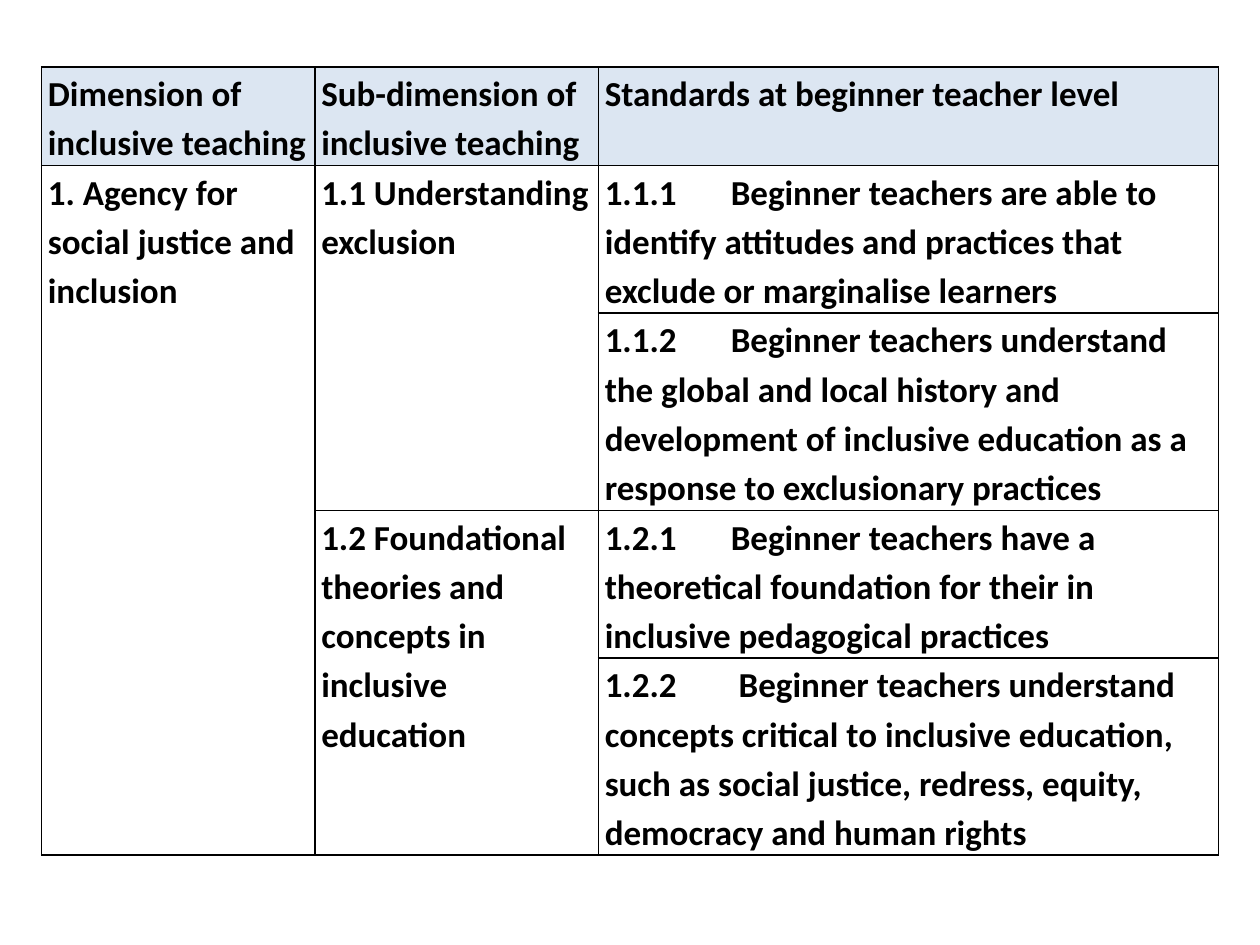
from lxml import etree
from pptx import Presentation
from pptx import util as u
from pptx.dml.color import RGBColor
from pptx.oxml import ns

COLORS = {"ink": "000000", "header": "DCE6F2"}
HEADERS = [
    "Dimension of inclusive teaching",
    "Sub-dimension of inclusive teaching",
    "Standards at beginner teacher level",
]
DIMENSION = "1. Agency for social justice and inclusion"
SUB_DIMENSIONS = [
    ("1.1 Understanding exclusion", [
        ("1.1.1\tBeginner teachers are able to identify attitudes and practices "
         "that exclude or marginalise learners", 3),
        ("1.1.2\tBeginner teachers understand the global and local history and "
         "development of inclusive education as a response to exclusionary practices", 4),
    ]),
    ("1.2 Foundational theories and concepts in inclusive education", [
        ("1.2.1\tBeginner teachers have a theoretical foundation for their in "
         "inclusive pedagogical practices", 3),
        ("1.2.2\t Beginner teachers understand concepts critical to inclusive "
         "education, such as social justice, redress, equity, democracy and human rights", 4),
    ]),
]
COLUMNS = [2.17, 2.25, 4.92]
HEADER_LINES = 2
LINE_HEIGHT = 0.39
LEFT, TOP = 0.33, 0.53


def write(cell, content, size=20, font="Calibri", bold=True, color="ink", spacing=1.15):
    p = cell.text_frame.paragraphs[0]
    p.line_spacing = spacing
    r = p.add_run()
    r.text = content
    r.font.size = u.Pt(size)
    r.font.name = font
    r.font.bold = bold
    r.font.color.rgb = RGBColor.from_string(COLORS[color])


def add_borders(cell, width=1):
    tc_pr = cell._tc.get_or_add_tcPr()
    for side in ("lnL", "lnR", "lnT", "lnB"):
        ln = etree.SubElement(tc_pr, ns.qn(f"a:{side}"), w=str(u.Pt(width)))
        fill = etree.SubElement(ln, ns.qn("a:solidFill"))
        etree.SubElement(fill, ns.qn("a:srgbClr"), val=COLORS["ink"])


def main():
    prs = Presentation()
    prs.slide_width, prs.slide_height = u.Inches(10), u.Inches(7.5)
    s = prs.slides.add_slide(prs.slide_layouts[6])
    lines = [HEADER_LINES] + [n for _, standards in SUB_DIMENSIONS for _, n in standards]
    table = s.shapes.add_table(
        len(lines), len(COLUMNS), u.Inches(LEFT), u.Inches(TOP),
        u.Inches(sum(COLUMNS)), u.Inches(sum(lines) * LINE_HEIGHT)).table
    for column, width in zip(table.columns, COLUMNS):
        column.width = u.Inches(width)
    for row, count in zip(table.rows, lines):
        row.height = u.Inches(count * LINE_HEIGHT)

    for i in range(len(lines)):
        for j in range(len(COLUMNS)):
            cell = table.cell(i, j)
            cell.margin_left = cell.margin_right = u.Inches(0.05)
            cell.margin_top = cell.margin_bottom = 0
            add_borders(cell)
            if i == 0:
                cell.fill.solid()
                cell.fill.fore_color.rgb = RGBColor.from_string(COLORS["header"])
            else:
                cell.fill.background()

    for j, header in enumerate(HEADERS):
        write(table.cell(0, j), header)
    table.cell(1, 0).merge(table.cell(len(lines) - 1, 0))
    write(table.cell(1, 0), DIMENSION)
    i = 1
    for sub_dimension, standards in SUB_DIMENSIONS:
        table.cell(i, 1).merge(table.cell(i + len(standards) - 1, 1))
        write(table.cell(i, 1), sub_dimension)
        for standard, _ in standards:
            write(table.cell(i, 2), standard)
            i += 1
    prs.save("out.pptx")


if __name__ == "__main__":
    main()
